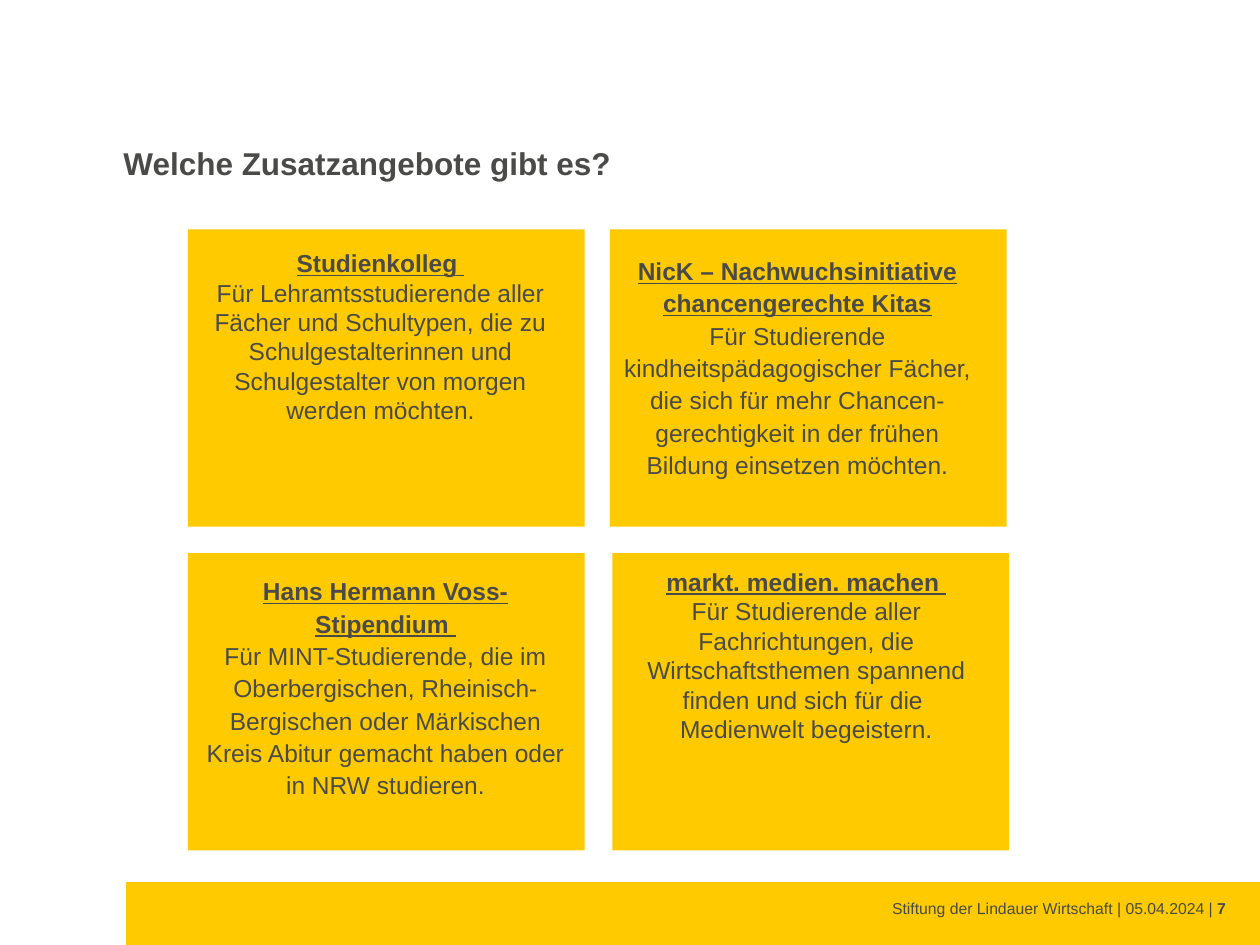
from pptx import Presentation
from pptx import util as u
from pptx.dml.color import RGBColor
from pptx.enum import shapes, text

COLORS = {"yellow": "FFCA00", "grey": "4A4A48"}
FONT = "Arial"
CARD_W, CARD_H = 3.15, 2.36
COLUMNS = (1.49, 4.84)
ROWS = (1.82, 4.39)

# column, row, shift of the card, text box (left, top, width, height), inset, line spacing, heading, body
CARDS = [
    (1, 1, 0.02, (4.83, 4.45, 3.14, 1.51), (0.1, 0.05), None, "markt. medien. machen ",
     "Für Studierende aller Fachrichtungen, die Wirtschaftsthemen spannend finden "
     "und sich für die \nMedienwelt begeistern."),
    (0, 1, 0, (1.64, 4.55, 2.84, 1.88), (0, 0), 1.1, "Hans Hermann Voss-Stipendium ",
     "Für MINT-Studierende, die im Oberbergischen, Rheinisch-Bergischen oder "
     "Märkischen Kreis Abitur gemacht haben oder in NRW studieren."),
    (0, 0, 0, (1.45, 1.92, 3.14, 1.51), (0.1, 0.05), None, "Studienkolleg ",
     "Für Lehramtsstudierende aller Fächer und Schultypen, die zu Schulgestalterinnen "
     "und Schulgestalter von morgen werden möchten."),
    (1, 0, 0, (4.91, 2.01, 2.84, 2.07), (0, 0), 1.1,
     "NicK – Nachwuchsinitiative chancengerechte Kitas",
     "Für Studierende kindheitspädagogischer Fächer, die sich für mehr "
     "Chancen-gerechtigkeit in der frühen Bildung einsetzen möchten."),
]


def rgb(name):
    return RGBColor.from_string(COLORS[name])


def paint(sp, color="yellow"):
    sp.shadow.inherit = False
    sp.fill.solid()
    sp.fill.fore_color.rgb = rgb(color)
    sp.line.fill.background()


def place(sp, box):
    sp.left, sp.top, sp.width, sp.height = map(u.Inches, box)


def set_frame(tf, inset=(0, 0), anchor=text.MSO_ANCHOR.TOP):
    tf.word_wrap = True
    tf.auto_size = text.MSO_AUTO_SIZE.NONE
    tf.vertical_anchor = anchor
    tf.margin_left = tf.margin_right = u.Inches(inset[0])
    tf.margin_top = tf.margin_bottom = u.Inches(inset[1])


def write(p, content, size=14, bold=False, underline=False, align=None, spacing=None):
    """Append a run to a paragraph; a newline becomes a line break."""
    if align is not None:
        p.alignment = align
    if spacing:
        p.line_spacing = spacing
    for i, line in enumerate(content.split("\n")):
        if i:
            p.add_line_break()
        r = p.add_run()
        r.text = line
        r.font.name, r.font.size = FONT, u.Pt(size)
        r.font.bold, r.font.underline = bold, underline
        r.font.color.rgb = rgb("grey")


def add_textbox(slide, box, inset=(0, 0)):
    tf = slide.shapes.add_textbox(*map(u.Inches, box)).text_frame
    set_frame(tf, inset)
    return tf


def add_title(slide, content):
    title = slide.shapes.title
    place(title, (0.98, 1.1, 7.09, 0.39))
    set_frame(title.text_frame, anchor=text.MSO_ANCHOR.MIDDLE)
    write(title.text_frame.paragraphs[0], content, size=18, bold=True,
          align=text.PP_ALIGN.LEFT)


def add_footer_band(slide):
    builder = slide.shapes.build_freeform(0.98, 7.04, scale=u.Inches(1))
    builder.add_line_segments([(10, 6.79), (10, 7.5), (0.99, 7.5)], close=True)
    paint(builder.convert_to_shape())


def add_footer(slide, content, number):
    p = add_textbox(slide, (3.78, 7.13, 5.95, 0.22)).paragraphs[0]
    write(p, content, size=9, align=text.PP_ALIGN.RIGHT)
    write(p, number, size=9, bold=True)


def add_card(slide, col, row, shift, box, inset, spacing, heading, body):
    sp = slide.shapes.add_shape(
        shapes.MSO_SHAPE.RECTANGLE,
        *map(u.Inches, (COLUMNS[col] + shift, ROWS[row], CARD_W, CARD_H)))
    paint(sp)
    tf = add_textbox(slide, box, inset)
    layout = {"align": text.PP_ALIGN.CENTER, "spacing": spacing}
    write(tf.paragraphs[0], heading, bold=True, underline=True, **layout)
    write(tf.add_paragraph(), body, **layout)


def main():
    prs = Presentation()
    prs.slide_width, prs.slide_height = u.Inches(10), u.Inches(7.5)
    slide = prs.slides.add_slide(prs.slide_layouts[5])
    add_footer_band(slide)
    add_title(slide, "Welche Zusatzangebote gibt es?")
    for card in CARDS:
        add_card(slide, *card)
    add_footer(slide, "Stiftung der Lindauer Wirtschaft | 05.04.2024 | ", "7")
    prs.save("out.pptx")


if __name__ == "__main__":
    main()
